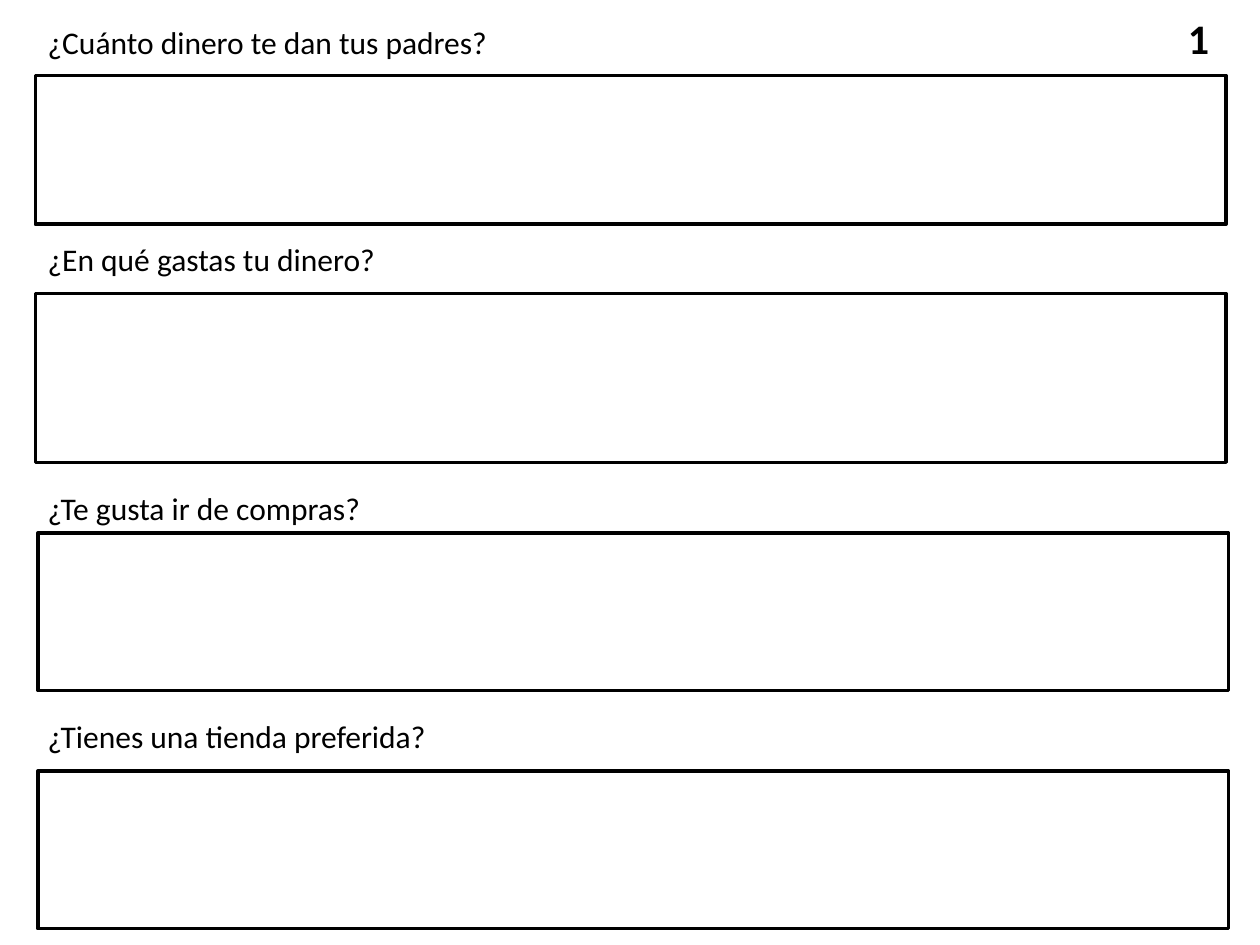
from pptx import Presentation
from pptx import util as u
from pptx.dml.color import RGBColor
from pptx.enum import shapes, text

PX = 9144  # EMU per px, at 100 px to the inch
COLOURS = {"ink": "000000", "paper": "FFFFFF"}

# question, label top, label width, box left, box top, box height
QUESTIONS = [
    ("¿Cuánto dinero te dan tus padres?", 13, 387, 28, 60, 118),
    ("¿En qué gastas tu dinero?", 186, 283, 28, 233, 134),
    ("¿Te gusta ir de compras?", 383, 271, 30, 423, 125),
    ("¿Tienes una tienda preferida?", 564, 324, 30, 612, 125),
]
LABEL_LEFT, LABEL_HEIGHT, BOX_WIDTH = 28, 40, 945


class Worksheet:
    font = "Calibri"
    ink = RGBColor.from_string(COLOURS["ink"])

    def __init__(self, slide):
        self.slide = slide
        fill = slide.background.fill
        fill.solid()
        fill.fore_color.rgb = RGBColor.from_string(COLOURS["paper"])

    def answer_box(self, *bounds):
        shape = self.slide.shapes.add_shape(
            shapes.MSO_SHAPE.RECTANGLE, *(n * PX for n in bounds))
        shape.shadow.inherit = False
        shape.fill.background()
        shape.line.color.rgb = self.ink
        shape.line.width = u.Pt(2)

    def label(self, words, *bounds, size=18, bold=False, wrap=False):
        shape = self.slide.shapes.add_textbox(*(n * PX for n in bounds))
        frame = shape.text_frame
        frame.word_wrap = wrap
        frame.auto_size = text.MSO_AUTO_SIZE.SHAPE_TO_FIT_TEXT
        paragraph = frame.paragraphs[0]
        paragraph.text = words
        font = paragraph.font
        font.name, font.size, font.bold = self.font, u.Pt(size), bold
        font.color.rgb = self.ink


def main():
    presentation = Presentation()
    presentation.slide_width = 1000 * PX
    presentation.slide_height = 750 * PX
    sheet = Worksheet(presentation.slides.add_slide(presentation.slide_layouts[6]))
    for question, top, width, box_left, box_top, box_height in QUESTIONS:
        sheet.answer_box(box_left, box_top, BOX_WIDTH, box_height)
        sheet.label(question, LABEL_LEFT, top, width, LABEL_HEIGHT)
    sheet.label("1", 933, 5, 67, 50, size=24, bold=True, wrap=True)
    presentation.save("out.pptx")


if __name__ == "__main__":
    main()
